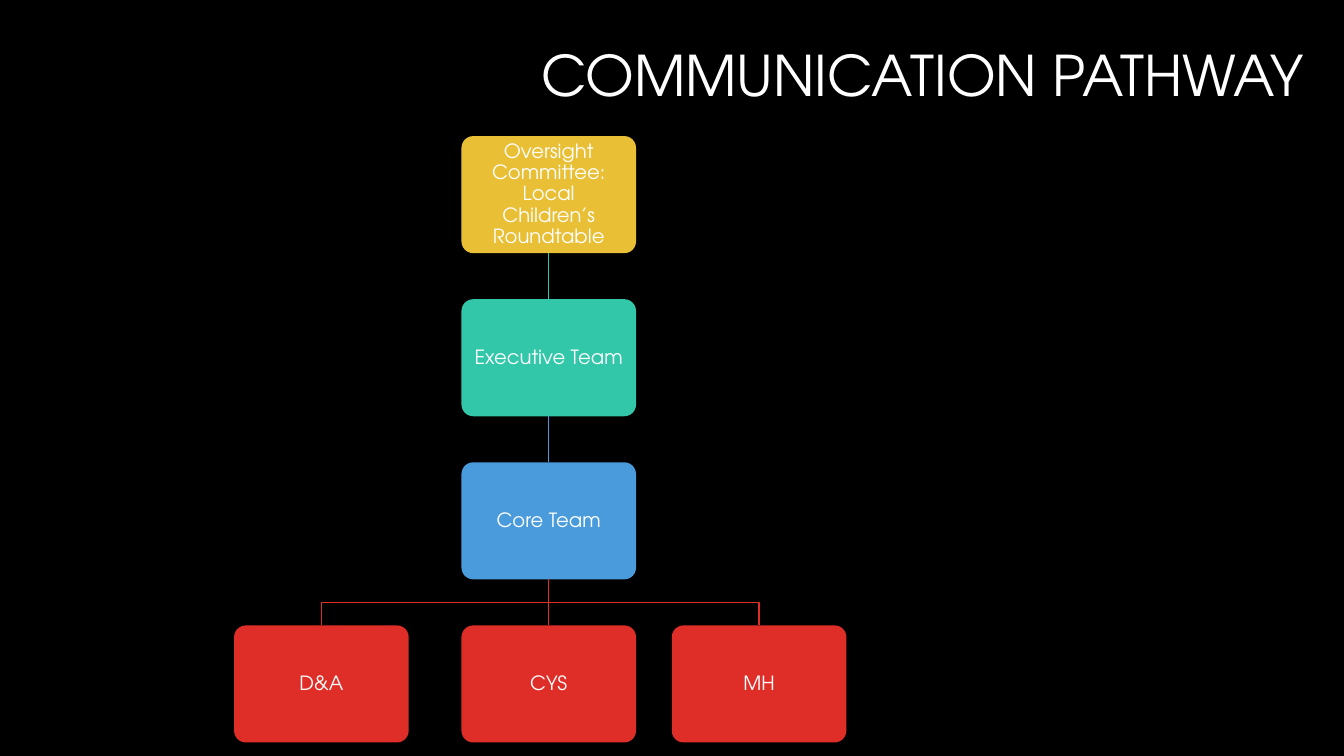
from dataclasses import dataclass
from pptx import Presentation
from pptx.dml.color import RGBColor as RGB
from pptx.enum.shapes import MSO_CONNECTOR as Link, MSO_SHAPE as Kind
from pptx.enum.text import MSO_ANCHOR as Anchor, MSO_AUTO_SIZE as Fit, PP_ALIGN as Align
from pptx.oxml.xmlchemy import OxmlElement
from pptx.util import Cm, Pt

TITLE = "COMMUNICATION PATHWAY"
CHAIN = [
    ("Oversight Committee: Local Children’s Roundtable", "gold"),
    ("Executive Team", "green"),
    ("Core Team", "blue"),
]
UNITS = [("D&A", 8.1), ("CYS", 13.83), ("MH", 19.13)]  # label, centre in cm


@dataclass(frozen=True)
class Theme:
    font: str = "TeX Gyre Adventor"
    back: RGB = RGB(0x00, 0x00, 0x00)
    text: RGB = RGB(0xFF, 0xFF, 0xFF)
    gold: RGB = RGB(0xE9, 0xBF, 0x35)
    green: RGB = RGB(0x32, 0xC7, 0xA9)
    blue: RGB = RGB(0x4A, 0x9B, 0xDC)
    red: RGB = RGB(0xDF, 0x2E, 0x28)
    head: Pt = Pt(40)
    label: Pt = Pt(14)
    line: Pt = Pt(1)


theme = Theme()
MID = Cm(13.83)
TOP = Cm(3.43)
WIDE, HIGH = Cm(4.4), Cm(2.95)
STEP = Cm(4.11)
INSET = Cm(0.24)


def write(frame, text, size, align):
    frame.word_wrap = True
    frame.auto_size = Fit.NONE
    frame.vertical_anchor = Anchor.MIDDLE
    para = frame.paragraphs[0]
    para.alignment = align
    para.line_spacing = 0.9
    run = para.add_run()
    run.text = text
    run.font.name = theme.font
    run.font.size = size
    run.font.color.rgb = theme.text


def add_box(slide, text, mid, top, color):
    box = slide.shapes.add_shape(Kind.ROUNDED_RECTANGLE, mid - WIDE // 2, top, WIDE, HIGH)
    box.adjustments[0] = 0.1
    box.shadow.inherit = False
    box.fill.solid()
    box.fill.fore_color.rgb = color
    box.line.fill.background()
    frame = box.text_frame
    frame.margin_left = frame.margin_right = INSET
    frame.margin_top = frame.margin_bottom = INSET
    write(frame, text, theme.label, Align.CENTER)
    return box


def join(slide, upper, lower, color):
    """Link two boxes: straight if they share a centre, else with an elbow."""
    start = upper.left + WIDE // 2, upper.top + HIGH
    end = lower.left + WIDE // 2, lower.top
    if start[0] == end[0]:
        link = slide.shapes.add_connector(Link.STRAIGHT, *start, *end)
        link.begin_connect(upper, 2)
        link.end_connect(lower, 0)
        link._element.spPr.append(OxmlElement("a:effectLst"))
    else:
        bend = (start[1] + end[1]) // 2
        path = slide.shapes.build_freeform(*start)
        path.add_line_segments([(start[0], bend), (end[0], bend), end], close=False)
        link = path.convert_to_shape()
        link.fill.background()
        link.shadow.inherit = False
    link.line.color.rgb = color
    link.line.width = theme.line


def main():
    deck = Presentation()
    deck.slide_width, deck.slide_height = Cm(33.87), Cm(19.05)
    slide = deck.slides.add_slide(deck.slide_layouts[5])
    slide.background.fill.solid()
    slide.background.fill.fore_color.rgb = theme.back

    title = slide.shapes.title
    title.left, title.top = Cm(10.54), Cm(0)
    title.width, title.height = Cm(22.58), Cm(3.94)
    write(title.text_frame, TITLE, theme.head, Align.RIGHT)

    last = None
    for row, (text, name) in enumerate(CHAIN):
        color = getattr(theme, name)
        box = add_box(slide, text, MID, TOP + row * STEP, color)
        if last:
            join(slide, last, box, color)
        last = box

    for text, mid in UNITS:
        box = add_box(slide, text, Cm(mid), TOP + len(CHAIN) * STEP, theme.red)
        join(slide, last, box, theme.red)

    deck.save("out.pptx")


if __name__ == "__main__":
    main()
